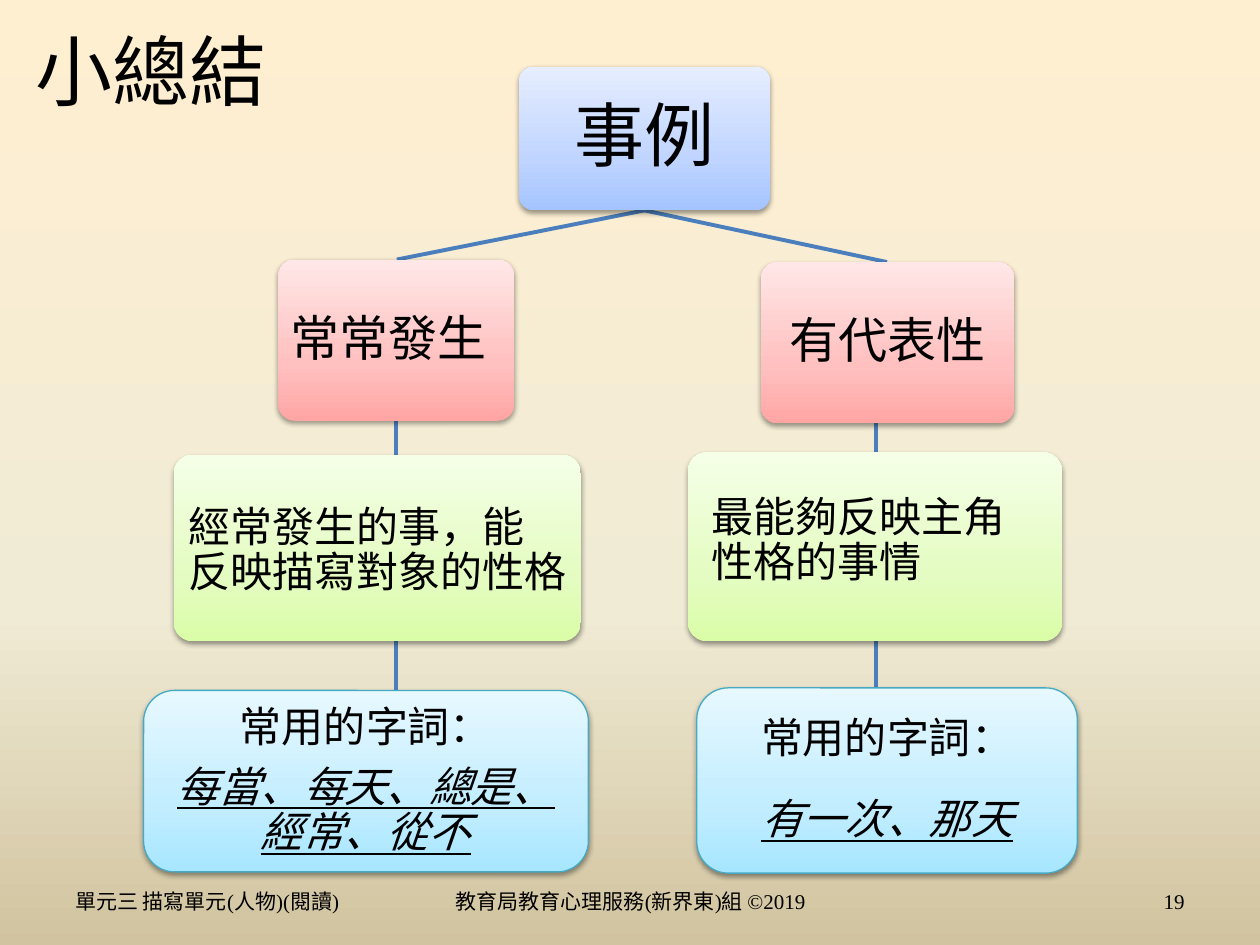
from dataclasses import dataclass

from lxml.etree import SubElement
from pptx import Presentation
from pptx.dml.color import RGBColor
from pptx.enum.shapes import MSO_CONNECTOR as Connector, MSO_SHAPE as Shape
from pptx.enum.text import MSO_ANCHOR as Anchor, PP_ALIGN as Align
from pptx.oxml.ns import qn
from pptx.util import Inches, Pt


@dataclass(frozen=True)
class Theme:
    ink: str = "000000"
    connector: str = "4B7EBC"
    outline: str = "46AAC5"
    background: tuple = ((0, "FFEFD1"), (65, "F0EBD5"), (100, "D1C39F"))
    blue: tuple = ((0, "A4C4FF"), (35, "BFD4FF"), (100, "E6EEFF"))
    red: tuple = ((0, "FFA6A5"), (35, "FFC0BF"), (100, "FFE7E7"))
    green: tuple = ((0, "DAFDA7"), (35, "E4FCC2"), (100, "F5FFE7"))
    cyan: tuple = ((0, "A7E6FF"), (35, "C1EDFF"), (100, "E7F8FF"))
    body_font: str = "Calibri"
    root_font: str = "Noto Sans CJK SC"
    footer_font: str = "Times New Roman"
    title_size: int = 44
    root_size: int = 40
    heading_size: int = 28
    body_size: int = 24
    footer_size: int = 12


THEME = Theme()


def apply_format(target, values):
    for name, value in values.items():
        setattr(target, name, value)


def within(box, part):
    left, top = box[:2]
    x, y, width, height = part
    return left + x, top + y, width, height


def set_gradient(fill, element, stops, angle):
    fill.gradient()
    fill.gradient_angle = angle
    stop_list = next(element.iter(qn("a:gsLst")))
    stop_list.clear()
    for position, color in stops:
        stop = SubElement(stop_list, qn("a:gs"), pos=str(position * 1000))
        SubElement(stop, qn("a:srgbClr"), val=color)


def add_shadow(shape):
    shape.shadow.inherit = False
    effects = next(shape.element.iter(qn("a:effectLst")))
    shadow = SubElement(effects, qn("a:outerShdw"), blurRad=str(Pt(3.1)),
                        dist=str(Pt(1.6)), dir="5400000", rotWithShape="0")
    color = SubElement(shadow, qn("a:srgbClr"), val=THEME.ink)
    SubElement(color, qn("a:alpha"), val="38000")


def write_paragraph(paragraph, text, size, font=THEME.body_font, align=Align.CENTER,
                    emphasis=False, **spacing):
    apply_format(paragraph, {"alignment": align, **spacing})
    run = paragraph.add_run()
    run.text = text
    apply_format(run.font, {"name": font, "size": Pt(size)})
    run.font.color.rgb = RGBColor.from_string(THEME.ink)
    if emphasis:
        apply_format(run.font, {"italic": True, "underline": True})


def add_card(slide, box, stops, lines, size, margins=(0.1, 0.1, 0.1, 0.1),
             corner=0.1, outline=None, gap=None, **text_format):
    card = slide.shapes.add_shape(Shape.ROUNDED_RECTANGLE, *map(Inches, box))
    card.adjustments[0] = corner
    set_gradient(card.fill, card.element, stops, 90)
    if outline:
        card.line.color.rgb = RGBColor.from_string(outline)
        card.line.width = Pt(0.75)
    else:
        card.line.fill.background()
    add_shadow(card)
    frame = card.text_frame
    sides = ("margin_left", "margin_top", "margin_right", "margin_bottom")
    apply_format(frame, {"word_wrap": True, "vertical_anchor": Anchor.MIDDLE,
                         **dict(zip(sides, map(Inches, margins)))})
    for index, line in enumerate(lines):
        paragraph = frame.add_paragraph() if index else frame.paragraphs[0]
        space = gap if gap and not index else size * 0.35
        write_paragraph(paragraph, line, size, emphasis=index > 0,
                        line_spacing=0.9, space_after=Pt(space), **text_format)


def add_link(slide, start, end):
    link = slide.shapes.add_connector(Connector.STRAIGHT, *map(Inches, (*start, *end)))
    link.line.color.rgb = RGBColor.from_string(THEME.connector)
    link.line.width = Pt(2.25)
    SubElement(link.element.spPr, qn("a:effectLst"))


def add_title(slide, box):
    title = slide.shapes.title
    places = zip(("left", "top", "width", "height"), map(Inches, box))
    apply_format(title, dict(places))
    title.text_frame.vertical_anchor = Anchor.MIDDLE
    write_paragraph(title.text_frame.paragraphs[0], "小總結", THEME.title_size,
                    align=Align.LEFT)


def add_root(slide, box):
    add_card(slide, box, THEME.blue, ["事例"], THEME.root_size, font=THEME.root_font)


def add_branch(slide, box, root_point, branch):
    heading, meaning, words = (within(box, branch[name][0])
                               for name in ("heading", "meaning", "words"))
    add_link(slide, root_point, (box[0] + branch["entry"], box[1]))
    for upper, lower in ((heading, meaning), (meaning, words)):
        x = box[0] + branch["trunk"]
        add_link(slide, (x, upper[1] + upper[3]), (x, lower[1]))
    add_card(slide, heading, THEME.red, [branch["heading"][1]], THEME.heading_size,
             branch["heading"][2])
    add_card(slide, meaning, THEME.green, [branch["meaning"][1]], THEME.body_size,
             branch["meaning"][2], align=Align.LEFT)
    add_card(slide, words, THEME.cyan, ["常用的字詞：", branch["words"][1]],
             THEME.body_size, (0.1, 0.05, 0.1, 0.05), 0.17, THEME.outline,
             branch["words"][2])


def add_footer(slide, box):
    left, top, _, height = box
    for x, width, text, align in (
        (0, 2.85, "單元三 描寫單元(人物)(閱讀)", Align.LEFT),
        (2.92, 3.17, "教育局教育心理服務(新界東)組 ©2019", Align.CENTER),
        (6.67, 2.33, "19", Align.RIGHT),
    ):
        note = slide.shapes.add_textbox(*map(Inches, (left + x, top, width, height)))
        apply_format(note.text_frame, {"word_wrap": True,
                                       "vertical_anchor": Anchor.MIDDLE})
        write_paragraph(note.text_frame.paragraphs[0], text, THEME.footer_size,
                        THEME.footer_font, align)


FREQUENT = {
    "entry": 2.01,
    "trunk": 2,
    "heading": ((1.07, 0, 1.87, 1.28), "常常發生", (0.04, 0.1, 0.16, 0.1)),
    "meaning": ((0.24, 1.55, 3.23, 1.48), "經常發生的事，能 反映描寫對象的性格",
                (0.07, 0.12, 0, 0.07)),
    "words": ((0, 3.42, 3.53, 1.44), "每當、每天、總是、經常、從不", None),
}
TYPICAL = {
    "entry": 1.58,
    "trunk": 1.49,
    "heading": ((0.58, 0, 2.01, 1.28), "有代表性", (0.1, 0.1, 0.1, 0.1)),
    "meaning": ((0, 1.51, 2.97, 1.5), "最能夠反映主角性格的事情",
                (0.14, 0.07, 0.15, 0.16)),
    "words": ((0.07, 3.38, 3.02, 1.47), "有一次、那天", 20),
}


def main():
    presentation = Presentation()
    apply_format(presentation, {"slide_width": Inches(10), "slide_height": Inches(7.5)})
    slide = presentation.slides.add_slide(presentation.slide_layouts[5])
    set_gradient(slide.background.fill, slide.element, THEME.background, 270)
    root = (4.12, 0.53, 1.99, 1.14)
    root_point = (root[0] + root[2] / 2, root[1] + root[3])
    add_title(slide, (0.18, -0.07, 9, 1.25))
    add_branch(slide, (1.14, 2.06, 3.53, 4.86), root_point, FREQUENT)
    add_branch(slide, (5.46, 2.08, 3.09, 4.85), root_point, TYPICAL)
    add_root(slide, root)
    add_footer(slide, (0.5, 6.95, 9, 0.4))
    presentation.save("out.pptx")


if __name__ == "__main__":
    main()
